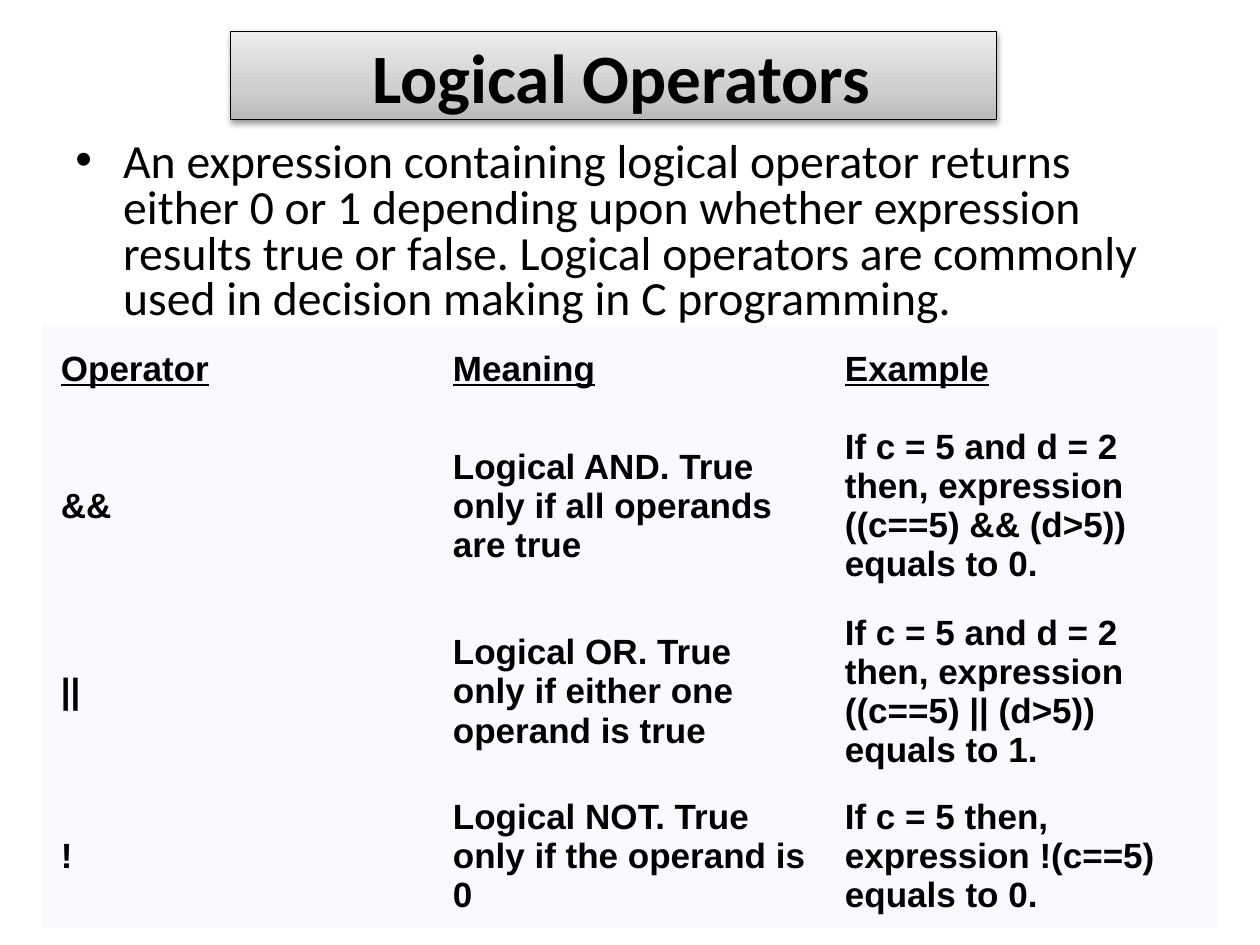
"""Build a slide that explains the logical operators of C."""
from lxml import etree
from pptx import Presentation, util as u
from pptx.dml.color import RGBColor
from pptx.enum import shapes, text
from pptx.oxml import parse_xml
from pptx.oxml.ns import nsdecls, qn

HEADING = " Logical Operators"
SUMMARY = (
    "An expression containing logical operator returns either 0 or 1 depending "
    "upon whether expression results true or false. Logical operators are "
    "commonly used in decision making in C programming."
)
OPERATORS = [
    ("Operator", "Meaning", "Example"),
    ("&&", "Logical AND. True only if all operands are true",
     "If c = 5 and d = 2 then, expression ((c==5) && (d>5)) equals to 0."),
    ("||", "Logical OR. True only if either one operand is true",
     "If c = 5 and d = 2 then, expression ((c==5) || (d>5)) equals to 1."),
    ("!", "Logical NOT. True only if the operand is 0",
     "If c = 5 then, expression !(c==5) equals to 0."),
]
ROW_HEIGHTS = (0.7, 1.44, 1.44, 1.09)
WIDTH, HEIGHT = 10, 7.5
TABLE_MARGIN = WIDTH / 30
BLACK = RGBColor(0, 0, 0)
PALE = RGBColor(0xF8, 0xFA, 0xFF)
GRADIENT = ((0, "BABABA"), (35, "CFCFCF"), (100, "EDEDED"))
PLAIN_TABLE = "{2D5ABB26-0587-4C30-8999-92F81FD0307C}"


def write(frame, words, size, font, bold=False, underline=False,
          align=text.PP_ALIGN.LEFT, spacing=1.0):
    frame.word_wrap = True
    paragraph = frame.paragraphs[0]
    paragraph.alignment = align
    paragraph.line_spacing = spacing
    run = paragraph.add_run()
    run.text = words
    run.font.size, run.font.name = u.Pt(size), font
    run.font.bold, run.font.underline = bold, underline
    run.font.color.rgb = BLACK
    return paragraph


def add_banner(slide):
    banner = slide.shapes.add_shape(
        shapes.MSO_SHAPE.RECTANGLE, *map(u.Inches, (1.83, 0.25, 6.08, 0.7)))
    banner.line.color.rgb, banner.line.width = BLACK, u.Pt(0.75)
    banner.fill.gradient()
    banner.fill.gradient_angle = 90
    stops = banner.element.spPr.find(qn("a:gradFill")).find(qn("a:gsLst"))
    for stop in list(stops):
        stops.remove(stop)
    for share, colour in GRADIENT:
        stop = etree.SubElement(stops, qn("a:gs"), pos=str(share * 1000))
        etree.SubElement(stop, qn("a:srgbClr"), val=colour)
    banner.element.spPr.append(parse_xml(
        f'<a:effectLst {nsdecls("a")}><a:outerShdw blurRad="40000" dist="20000" '
        'dir="5400000" rotWithShape="0"><a:srgbClr val="000000">'
        '<a:alpha val="38000"/></a:srgbClr></a:outerShdw></a:effectLst>'))
    banner.text_frame.vertical_anchor = text.MSO_ANCHOR.MIDDLE
    write(banner.text_frame, HEADING, 39.6, "Calibri", bold=True,
          align=text.PP_ALIGN.CENTER)


def add_summary(slide):
    summary = slide.shapes.add_textbox(*map(u.Inches, (0.5, 1.08, 9, 1.67)))
    paragraph = write(summary.text_frame, SUMMARY, 27.2, "Calibri", spacing=0.8)
    properties = paragraph._p.get_or_add_pPr()
    indent = u.Inches(0.38)
    properties.set("marL", str(indent))
    properties.set("indent", str(-indent))
    etree.SubElement(properties, qn("a:buFont"), typeface="Arial")
    etree.SubElement(properties, qn("a:buChar"), char="•")


def add_operators(slide):
    width = WIDTH - 2 * TABLE_MARGIN
    frame = slide.shapes.add_table(
        len(OPERATORS), len(OPERATORS[0]),
        *map(u.Inches, (TABLE_MARGIN, 2.58, width, sum(ROW_HEIGHTS))))
    table = frame.table
    table._tbl.tblPr.find(qn("a:tableStyleId")).text = PLAIN_TABLE
    for row, height in zip(table.rows, ROW_HEIGHTS):
        row.height = u.Inches(height)
    for r, entries in enumerate(OPERATORS):
        for c, words in enumerate(entries):
            cell = table.cell(r, c)
            cell.fill.solid()
            cell.fill.fore_color.rgb = PALE
            cell.vertical_anchor = text.MSO_ANCHOR.MIDDLE
            cell.margin_left = cell.margin_right = u.Inches(0.15)
            cell.margin_top = cell.margin_bottom = u.Inches(0.07)
            write(cell.text_frame, words, 20, "Arial", bold=True, underline=r == 0)


def main():
    deck = Presentation()
    deck.slide_width, deck.slide_height = u.Inches(WIDTH), u.Inches(HEIGHT)
    slide = deck.slides.add_slide(deck.slide_layouts[6])
    add_banner(slide)
    add_summary(slide)
    add_operators(slide)
    deck.save("out.pptx")


if __name__ == "__main__":
    main()
